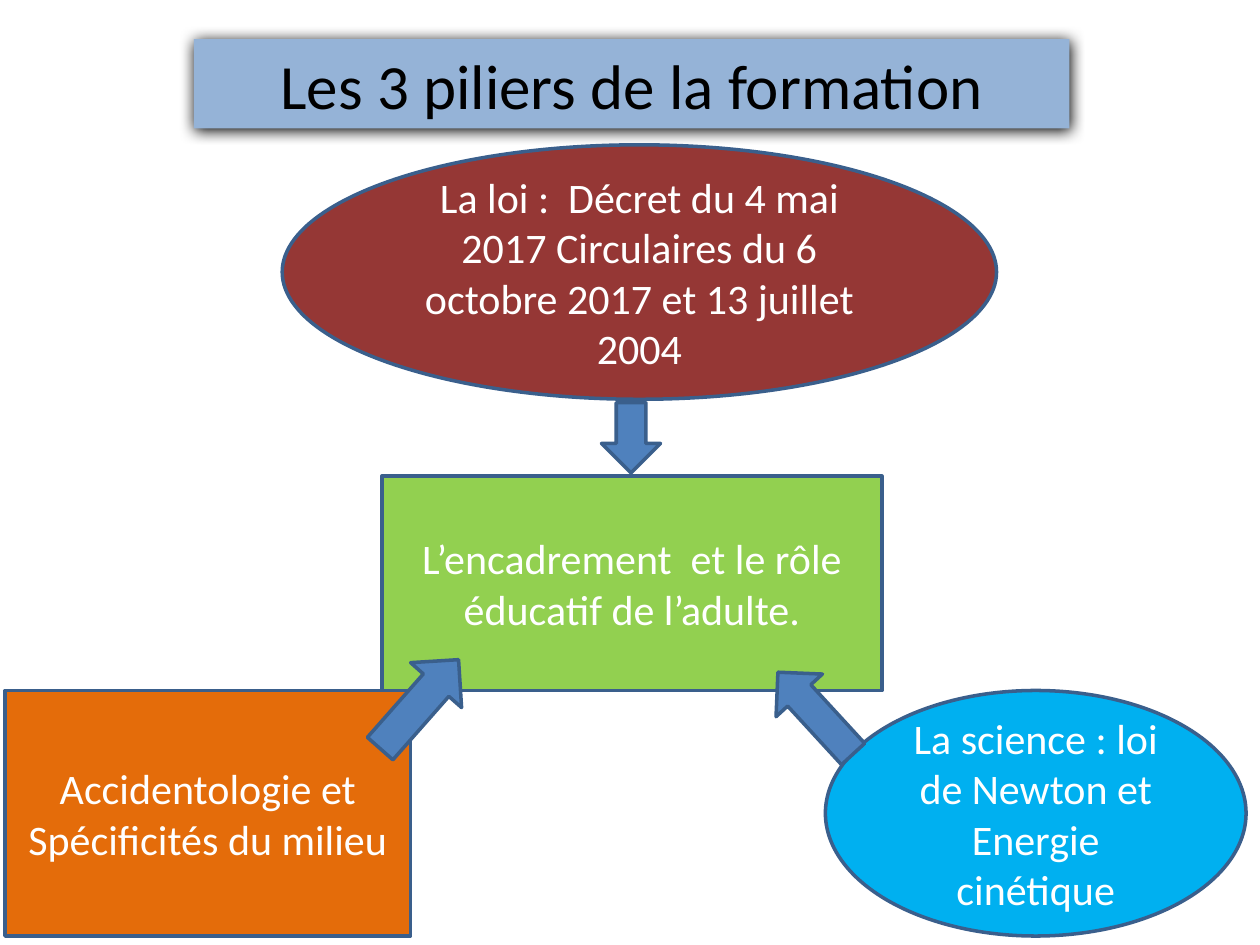
from dataclasses import dataclass

from lxml import etree
from pptx import Presentation
from pptx.dml.color import RGBColor
from pptx.enum.shapes import MSO_SHAPE
from pptx.enum.text import MSO_ANCHOR, MSO_AUTO_SIZE, PP_ALIGN
from pptx.oxml.ns import qn
from pptx.util import Cm, Pt

ELLIPSE, RECT, ARROW = MSO_SHAPE.OVAL, MSO_SHAPE.RECTANGLE, MSO_SHAPE.RIGHT_ARROW
TITLE_ONLY = 5


@dataclass(frozen=True)
class Theme:
    font: str = "Calibri"
    title_size: int = 36
    text_size: int = 24
    line_width: int = 2
    title_text: str = "000000"
    text: str = "FFFFFF"
    line: str = "3A5F8C"
    banner: str = "95B3D7"
    arrow: str = "4F81BD"
    law: str = "953735"
    setting: str = "E46C0A"
    adult: str = "92D050"
    science: str = "00B0F0"
    shadow: str = "000000"


THEME = Theme()

# (shape, fill, box in cm, text)
PILLARS = [
    (ELLIPSE, THEME.law, (5.69, 2.92, 14.4, 5.13),
     "La loi :  Décret du 4 mai 2017 Circulaires du 6 octobre 2017 et 13 juillet 2004"),
    (RECT, THEME.setting, (0.1, 13.92, 8.18, 4.95),
     "Accidentologie et Spécificités du milieu"),
    (RECT, THEME.adult, (7.7, 9.6, 10.08, 4.32),
     "L’encadrement  et le rôle éducatif de l’adulte."),
    (ELLIPSE, THEME.science, (16.64, 13.92, 8.48, 4.95),
     "La science : loi de Newton et Energie cinétique"),
]

# (box in cm before rotation, rotation)
ARROWS = [
    ((12.01, 8.23, 1.42, 1.19), 90),
    ((15.32, 13.74, 2.24, 1.27), 227.4),
    ((7.26, 13.51, 2.39, 1.37), 311.4),
]


def write(sp, text, size, color):
    tf = sp.text_frame
    tf.word_wrap = True
    tf.auto_size = MSO_AUTO_SIZE.NONE
    tf.vertical_anchor = MSO_ANCHOR.MIDDLE
    p = tf.paragraphs[0]
    p.alignment = PP_ALIGN.CENTER
    r = p.add_run()
    r.text = text
    r.font.name = THEME.font
    r.font.size = Pt(size)
    r.font.color.rgb = RGBColor.from_string(color)


def paint(sp, fill):
    sp.fill.solid()
    sp.fill.fore_color.rgb = RGBColor.from_string(fill)


def add_outlined(s, kind, box, fill):
    sp = s.shapes.add_shape(kind, *map(Cm, box))
    sp.shadow.inherit = False
    paint(sp, fill)
    sp.line.color.rgb = RGBColor.from_string(THEME.line)
    sp.line.width = Pt(THEME.line_width)
    return sp


def add_shadow(sp, blur, distance, direction):
    sp.shadow.inherit = False
    effects = sp.element.spPr.find(qn("a:effectLst"))
    shadow = etree.SubElement(effects, qn("a:outerShdw"), blurRad=str(Pt(blur)),
                              dist=str(Pt(distance)), dir=str(direction * 60000))
    etree.SubElement(shadow, qn("a:srgbClr"), val=THEME.shadow)


def place_title(s, box, text):
    sp = s.shapes.title
    sp.left, sp.top, sp.width, sp.height = map(Cm, box)
    paint(sp, THEME.banner)
    # A placeholder has no shadow property, so its effect list is made here
    etree.SubElement(sp.element.spPr, qn("a:effectLst"))
    effects = sp.element.spPr.find(qn("a:effectLst"))
    shadow = etree.SubElement(effects, qn("a:outerShdw"), blurRad=str(Pt(8.5)),
                              dist=str(Pt(1)), dir=str(90 * 60000))
    etree.SubElement(shadow, qn("a:srgbClr"), val=THEME.shadow)
    write(sp, text, THEME.title_size, THEME.title_text)


def place_pillar(s, kind, fill, box, text):
    write(add_outlined(s, kind, box, fill), text, THEME.text_size, THEME.text)


def place_arrow(s, box, rotation):
    add_outlined(s, ARROW, box, THEME.arrow).rotation = rotation


def main():
    prs = Presentation()
    prs.slide_width, prs.slide_height = Cm(25.4), Cm(19.05)
    s = prs.slides.add_slide(prs.slide_layouts[TITLE_ONLY])
    place_title(s, (3.91, 0.79, 17.65, 1.8), "Les 3 piliers de la formation")
    for pillar in PILLARS:
        place_pillar(s, *pillar)
    for arrow in ARROWS:
        place_arrow(s, *arrow)
    prs.save("out.pptx")


if __name__ == "__main__":
    main()
